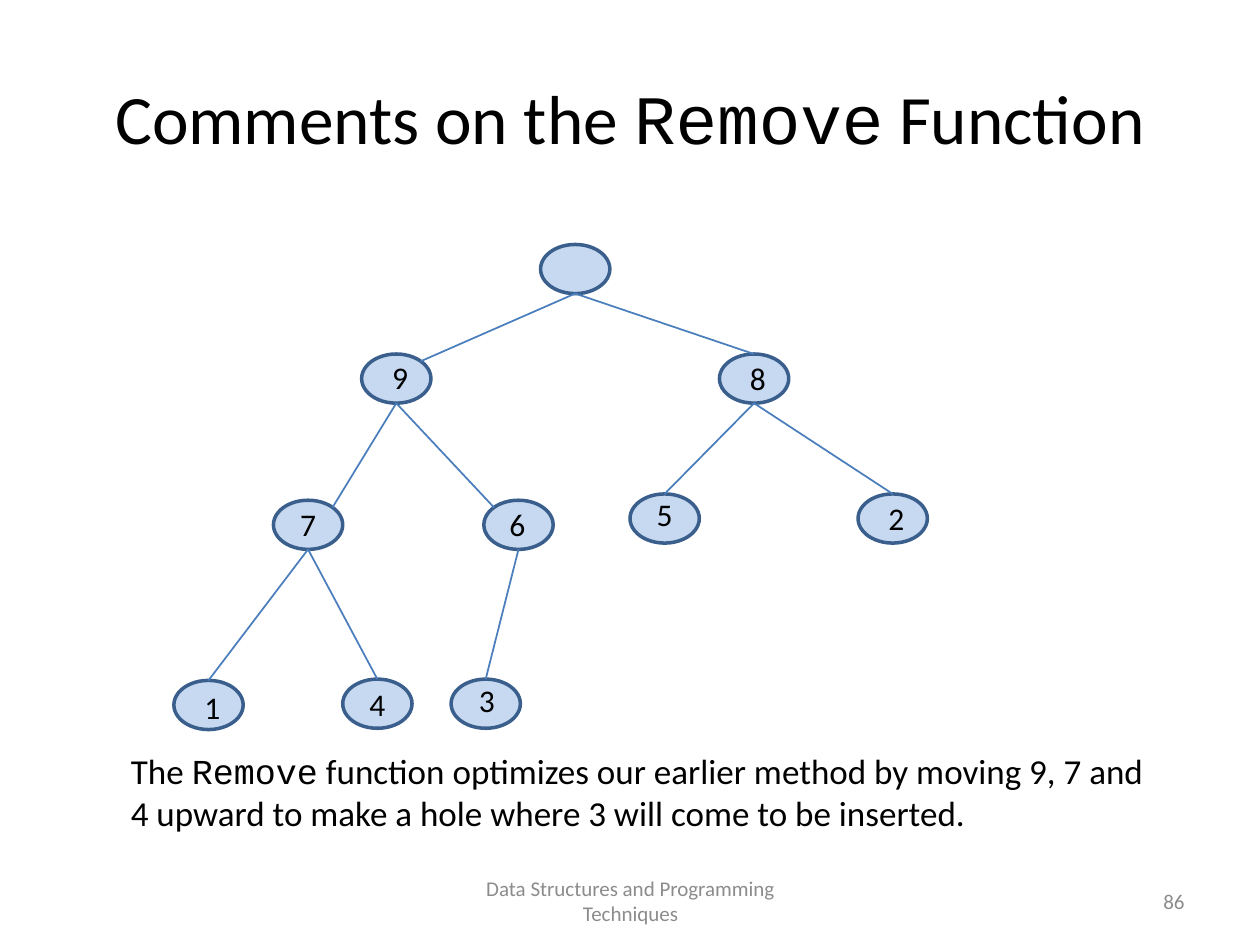
from pptx import Presentation
from pptx.util import Inches, Pt
from pptx.dml.color import RGBColor
from pptx.enum import shapes, text
from pptx.oxml import ns
from lxml import etree

BLACK = RGBColor(0x00, 0x00, 0x00)
GREY = RGBColor(0x8C, 0x8C, 0x8C)
NODE_FILL = RGBColor(0xC6, 0xD9, 0xF1)
NODE_LINE = RGBColor(0x3A, 0x5F, 0x8C)
EDGE_LINE = RGBColor(0x4B, 0x7E, 0xBC)
BODY, CODE = "Calibri", "Courier New"
LEFT, CENTER, RIGHT = text.PP_ALIGN.LEFT, text.PP_ALIGN.CENTER, text.PP_ALIGN.RIGHT
TOP, MIDDLE = text.MSO_ANCHOR.TOP, text.MSO_ANCHOR.MIDDLE
NODE_W, NODE_H = 0.55, 0.39
LABEL_W, LABEL_H = 0.61, 0.4
CORNER = 0.146

NODES = {
    "root": (4.29, 1.94),
    "9": (2.87, 2.81),
    "8": (5.71, 2.81),
    "7": (2.17, 3.97),
    "6": (3.84, 3.97),
    "5": (5, 3.92),
    "2": (6.81, 3.92),
    "1": (1.38, 5.4),
    "4": (2.72, 5.39),
    "3": (3.58, 5.39),
}
EDGES = [
    ("root", "9", "right"), ("root", "8", "top"),
    ("9", "7", "right"), ("9", "6", "left"),
    ("8", "5", "top"), ("8", "2", "top"),
    ("7", "1", "top"), ("7", "4", "top"),
    ("6", "3", "top"),
]
LABELS = {
    "9": (2.87, 2.79),
    "8": (5.71, 2.8),
    "7": (2.14, 3.96),
    "6": (3.8, 3.96),
    "5": (4.97, 3.88),
    "2": (6.81, 3.91),
    "1": (1.38, 5.41),
    "4": (2.69, 5.39),
    "3": (3.56, 5.36),
}


def add_text(s, box, runs, size, align=LEFT, anchor=TOP, color=BLACK):
    """Add a wrapping text box from (wording, font) runs."""
    tf = s.shapes.add_textbox(*map(Inches, box)).text_frame
    tf.word_wrap = True
    tf.vertical_anchor = anchor
    p = tf.paragraphs[0]
    p.alignment = align
    for wording, font in runs:
        r = p.add_run()
        r.text = wording
        r.font.name = font
        r.font.size = Pt(size)
        r.font.color.rgb = color


def add_node(s, left, top):
    """Add one oval tree node."""
    sp = s.shapes.add_shape(shapes.MSO_SHAPE.OVAL, Inches(left), Inches(top),
                            Inches(NODE_W), Inches(NODE_H))
    sp.shadow.inherit = False
    sp.fill.solid()
    sp.fill.fore_color.rgb = NODE_FILL
    sp.line.color.rgb = NODE_LINE
    sp.line.width = Pt(2)
    return sp


def add_edge(s, parent, child, side):
    """Add a line from the parent's bottom to the child's top, upper left or upper right."""
    across = {"left": CORNER, "top": 0.5, "right": 1 - CORNER}[side]
    down = 0 if side == "top" else CORNER
    cxn = s.shapes.add_connector(
        shapes.MSO_CONNECTOR.STRAIGHT,
        parent.left + parent.width // 2, parent.top + parent.height,
        child.left + int(child.width * across), child.top + int(child.height * down))
    if side == "top":
        cxn.end_connect(child, 0)
    cxn.line.color.rgb = EDGE_LINE
    cxn.line.width = Pt(1)
    etree.SubElement(cxn._element.spPr, ns.qn("a:effectLst"))


def main():
    """Build the slide and save it."""
    prs = Presentation()
    prs.slide_width, prs.slide_height = Inches(10), Inches(7.5)
    s = prs.slides.add_slide(prs.slide_layouts[6])

    add_text(s, (0.5, 0.3, 9, 1.25),
             [("Comments on the ", BODY), ("Remove", CODE), (" Function", BODY)],
             39.6, CENTER, MIDDLE)
    nodes = {name: add_node(s, *at) for name, at in NODES.items()}
    for parent, child, side in EDGES:
        add_edge(s, nodes[parent], nodes[child], side)
    for name, at in LABELS.items():
        add_text(s, (*at, LABEL_W, LABEL_H), [(name, BODY)], 18, CENTER)
    add_text(s, (0.94, 5.9, 8.35, 0.77),
             [("The ", BODY), ("Remove", CODE),
              (" function optimizes our earlier method by moving 9, 7 and 4 upward "
               "to make a hole where 3 will come to be inserted.", BODY)], 20)
    add_text(s, (3.42, 6.95, 3.17, 0.4),
             [("Data Structures and Programming Techniques", BODY)],
             12, CENTER, MIDDLE, GREY)
    add_text(s, (7.17, 6.95, 2.33, 0.4), [("86", BODY)], 12, RIGHT, MIDDLE, GREY)

    prs.save("out.pptx")


if __name__ == "__main__":
    main()
